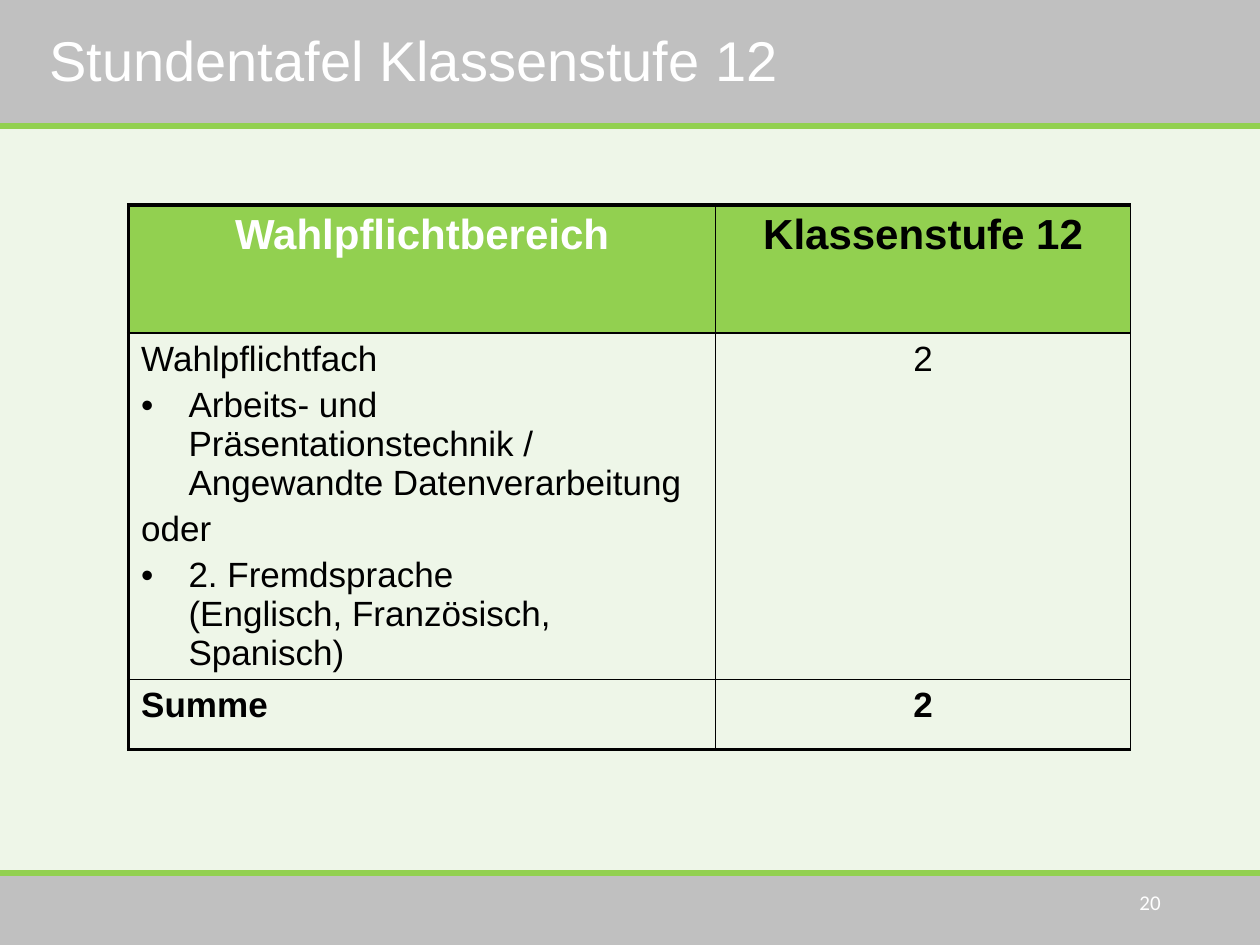
from dataclasses import dataclass

from lxml import etree
from pptx import Presentation
from pptx.dml.color import RGBColor
from pptx.enum.shapes import MSO_CONNECTOR, MSO_SHAPE
from pptx.enum.text import MSO_ANCHOR, MSO_AUTO_SIZE, PP_ALIGN
from pptx.oxml.ns import qn
from pptx.util import Pt

LEFT, CENTER, RIGHT = PP_ALIGN.LEFT, PP_ALIGN.CENTER, PP_ALIGN.RIGHT
MIDDLE = MSO_ANCHOR.MIDDLE
NO_AUTOFIT = MSO_AUTO_SIZE.NONE
RECTANGLE = MSO_SHAPE.RECTANGLE
STRAIGHT = MSO_CONNECTOR.STRAIGHT

SLIDE_WIDTH, SLIDE_HEIGHT = 720, 540
HEADER_HEIGHT = 72
FOOTER_TOP = 500.4
FOOTER_RULE_Y = 499
BULLET_INDENT = 27


@dataclass(frozen=True)
class Theme:
    background: str = "EEF6E8"
    bar: str = "C0C0C0"
    accent: str = "92D050"
    light: str = "FFFFFF"
    dark: str = "000000"
    font: str = "Arial"
    number_font: str = "Calibri"
    title_size: float = 32
    heading_size: float = 24
    body_size: float = 20
    number_size: float = 12
    rule_width: float = 3.5
    thick_border: float = 2.25
    thin_border: float = 1


@dataclass(frozen=True)
class CellStyle:
    size: float
    color: str
    bold: bool = False
    fill: str = ""


class SlideBuilder:
    def __init__(self, slide, theme):
        self.slide = slide
        self.theme = theme
        fill = slide.background.fill
        fill.solid()
        fill.fore_color.rgb = RGBColor.from_string(theme.background)

    def set_font(self, paragraph, size, color, name=None, bold=False):
        font = paragraph.font
        font.name = name or self.theme.font
        font.size = Pt(size)
        font.bold = bold
        font.color.rgb = RGBColor.from_string(color)

    def bar(self, top, height):
        shape = self.slide.shapes.add_shape(
            RECTANGLE, 0, Pt(top), Pt(SLIDE_WIDTH), Pt(height))
        shape.shadow.inherit = False
        shape.fill.solid()
        shape.fill.fore_color.rgb = RGBColor.from_string(self.theme.bar)
        shape.line.fill.background()

    def rule(self, y):
        line = self.slide.shapes.add_connector(
            STRAIGHT, 0, Pt(y), Pt(SLIDE_WIDTH), Pt(y))
        line.line.color.rgb = RGBColor.from_string(self.theme.accent)
        line.line.width = Pt(self.theme.rule_width)
        etree.SubElement(line._element.spPr, qn("a:effectLst"))

    def title(self, text, left, top, width, height):
        """Fill the title placeholder and bring it in front of the bars."""
        shape = self.slide.shapes.title
        shape.left, shape.top = Pt(left), Pt(top)
        shape.width, shape.height = Pt(width), Pt(height)
        self.slide.shapes._spTree.append(shape._element)
        frame = shape.text_frame
        frame.text = text
        frame.auto_size = NO_AUTOFIT
        frame.vertical_anchor = MIDDLE
        paragraph = frame.paragraphs[0]
        paragraph.alignment = LEFT
        paragraph.line_spacing = 0.9
        self.set_font(paragraph, self.theme.title_size, self.theme.light)

    def page_number(self, text, left, top, width, height):
        frame = self.slide.shapes.add_textbox(
            Pt(left), Pt(top), Pt(width), Pt(height)).text_frame
        frame.word_wrap = True
        frame.vertical_anchor = MIDDLE
        frame.text = text
        paragraph = frame.paragraphs[0]
        paragraph.alignment = RIGHT
        self.set_font(paragraph, self.theme.number_size, self.theme.light,
                      self.theme.number_font)

    def table(self, rows, styles, left, top, column_widths, row_heights):
        """Build a table whose cells are lists of (text, has_bullet)."""
        table = self.slide.shapes.add_table(
            len(rows), len(column_widths), Pt(left), Pt(top),
            Pt(sum(column_widths)), Pt(sum(row_heights))).table
        table.first_row = table.horz_banding = False
        for column, width in zip(table.columns, column_widths):
            column.width = Pt(width)
        thick, thin = self.theme.thick_border, self.theme.thin_border
        last_row = len(rows) - 1
        for row_index, (row, style) in enumerate(zip(rows, styles)):
            table.rows[row_index].height = Pt(row_heights[row_index])
            for column_index, lines in enumerate(row):
                cell = table.cell(row_index, column_index)
                self.cell_borders(cell, {
                    "L": thin if column_index else thick,
                    "R": thin,
                    "T": thin if row_index else thick,
                    "B": thick if row_index == last_row else thin,
                })
                centered = column_index > 0 or row_index == 0
                self.cell_text(cell, lines, style, CENTER if centered else LEFT)

    def cell_borders(self, cell, widths):
        properties = cell._tc.get_or_add_tcPr()
        for side, width in widths.items():
            line = etree.SubElement(properties, qn(f"a:ln{side}"), w=str(Pt(width)))
            fill = etree.SubElement(line, qn("a:solidFill"))
            etree.SubElement(fill, qn("a:srgbClr"), val=self.theme.dark)

    def cell_text(self, cell, lines, style, alignment):
        if style.fill:
            cell.fill.solid()
            cell.fill.fore_color.rgb = RGBColor.from_string(style.fill)
        else:
            cell.fill.background()
        frame = cell.text_frame
        for index, (text, has_bullet) in enumerate(lines):
            paragraph = frame.add_paragraph() if index else frame.paragraphs[0]
            paragraph.text = text
            paragraph.alignment = alignment
            if index:
                paragraph.space_before = Pt(style.size * 0.2)
            if has_bullet:
                self.bullet(paragraph)
            # The first column of the heading row is light, all else dark.
            self.set_font(paragraph, style.size, style.color, bold=style.bold)

    def bullet(self, paragraph):
        properties = paragraph._p.get_or_add_pPr()
        properties.set("marL", str(Pt(BULLET_INDENT)))
        properties.set("indent", str(-Pt(BULLET_INDENT)))
        etree.SubElement(properties, qn("a:buFont"), typeface=self.theme.font)
        etree.SubElement(properties, qn("a:buChar"), char="•")


def main():
    theme = Theme()
    presentation = Presentation()
    presentation.slide_width = Pt(SLIDE_WIDTH)
    presentation.slide_height = Pt(SLIDE_HEIGHT)
    slide = presentation.slides.add_slide(presentation.slide_layouts[5])
    builder = SlideBuilder(slide, theme)

    builder.bar(FOOTER_TOP, SLIDE_HEIGHT - FOOTER_TOP)
    builder.bar(0, HEADER_HEIGHT)
    builder.rule(HEADER_HEIGHT)
    builder.rule(FOOTER_RULE_Y)
    builder.title("Stundentafel Klassenstufe 12", 21, 0, 482, HEADER_HEIGHT)

    subjects = [
        ("Wahlpflichtfach", False),
        ("Arbeits- und Präsentationstechnik / Angewandte Datenverarbeitung", True),
        ("oder", False),
        ("2. Fremdsprache \v(Englisch, Französisch, Spanisch)", True),
    ]
    rows = [
        [[("Wahlpflichtbereich", False)], [("Klassenstufe 12", False)]],
        [subjects, [("2", False)]],
        [[("Summe", False)], [("2", False)]],
    ]
    styles = [
        CellStyle(theme.heading_size, theme.dark, bold=True, fill=theme.accent),
        CellStyle(theme.body_size, theme.dark),
        CellStyle(theme.body_size, theme.dark, bold=True),
    ]
    builder.table(rows, styles, 73.5, 117.2, [335.5, 237], [73.2, 197.8, 40])
    heading = slide.shapes[-1].table.cell(0, 0).text_frame.paragraphs[0]
    heading.font.color.rgb = RGBColor.from_string(theme.light)
    builder.page_number("20", 508.3, 501, 162, 29)
    presentation.save("out.pptx")


if __name__ == "__main__":
    main()
